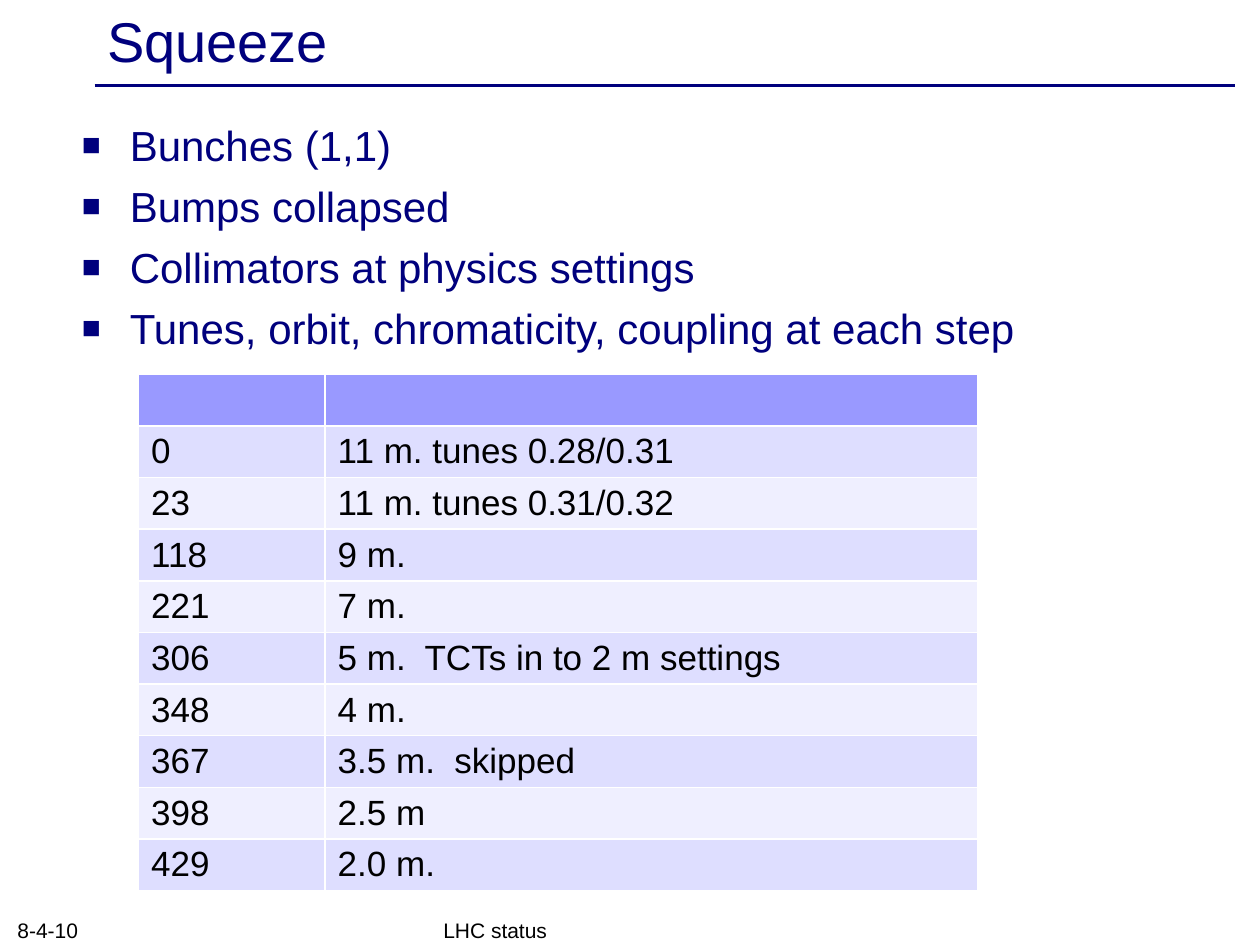
from lxml.etree import SubElement
from pptx import Presentation
from pptx.dml.color import RGBColor
from pptx.enum.shapes import MSO_CONNECTOR
from pptx.enum.text import MSO_ANCHOR, MSO_AUTO_SIZE, PP_ALIGN
from pptx.oxml.ns import qn
from pptx.util import Inches, Pt

COLORS = {"navy": "00007D", "black": "000000", "header": "9999FF",
          "odd": "DEDEFF", "even": "EFEFFF"}
FONT = "Arial"

BULLETS = ["Bunches (1,1)", "Bumps collapsed", "Collimators at physics settings",
           "Tunes, orbit, chromaticity, coupling at each step"]
SQUEEZE_STEPS = [
    ("0", "11 m. tunes 0.28/0.31"),
    ("23", "11 m. tunes 0.31/0.32"),
    ("118", "9 m."),
    ("221", "7 m."),
    ("306", "5 m.  TCTs in to 2 m settings"),
    ("348", "4 m."),
    ("367", "3.5 m.  skipped"),
    ("398", "2.5 m"),
    ("429", "2.0 m."),
]


def rgb(name):
    return RGBColor.from_string(COLORS[name])


def place(sp, box):
    sp.left, sp.top, sp.width, sp.height = (Inches(v) for v in box)


def add_text(p, text, size, color):
    p.alignment = PP_ALIGN.LEFT
    r = p.add_run()
    r.text = text
    r.font.name = FONT
    r.font.size = Pt(size)
    r.font.color.rgb = rgb(color)


def set_bullet(p):
    """Give the paragraph a hanging square bullet at 75% of the text size."""
    pPr = p._p.get_or_add_pPr()
    indent = Inches(0.38)
    pPr.set("marL", str(indent))
    pPr.set("indent", str(-indent))
    clr = SubElement(pPr, qn("a:buClr"))
    SubElement(clr, qn("a:srgbClr"), val=COLORS["navy"])
    SubElement(pPr, qn("a:buSzPct"), val="75000")
    SubElement(pPr, qn("a:buFont"), typeface=FONT)
    SubElement(pPr, qn("a:buChar"), char="■")


def fill_title(s, box, text):
    sp = s.shapes.title
    place(sp, box)
    tf = sp.text_frame
    tf.auto_size = MSO_AUTO_SIZE.NONE
    tf.vertical_anchor = MSO_ANCHOR.MIDDLE
    add_text(tf.paragraphs[0], text, 32, "navy")


def add_title_rule(s, left, right, y):
    line = s.shapes.add_connector(MSO_CONNECTOR.STRAIGHT, Inches(left), Inches(y),
                                  Inches(right), Inches(y))
    line.line.color.rgb = rgb("navy")
    line.line.width = Pt(2)
    SubElement(line._element.spPr, qn("a:effectLst"))


def fill_bullets(s, box, items):
    sp = s.placeholders[1]
    place(sp, box)
    tf = sp.text_frame
    tf.auto_size = MSO_AUTO_SIZE.NONE
    for i, item in enumerate(items):
        p = tf.add_paragraph() if i else tf.paragraphs[0]
        set_bullet(p)
        p.space_before = Pt(6 if i else 0)
        add_text(p, item, 24, "navy")


def add_steps_table(s, box, steps, first_share):
    """Draw an empty header row, then one banded row per squeeze step."""
    rows = [("", "")] + steps
    table = s.shapes.add_table(len(rows), 2, *(Inches(v) for v in box)).table
    width = box[2]
    table.columns[0].width = Inches(width * first_share)
    table.columns[1].width = Inches(width * (1 - first_share))
    for i, row in enumerate(rows):
        band = "header" if i == 0 else ("odd" if i % 2 else "even")
        for j, text in enumerate(row):
            cell = table.cell(i, j)
            cell.fill.solid()
            cell.fill.fore_color.rgb = rgb(band)
            cell.margin_top = cell.margin_bottom = Inches(0.03)
            cell.vertical_anchor = MSO_ANCHOR.MIDDLE
            if text:
                add_text(cell.text_frame.paragraphs[0], text, 20, "black")


def add_footer(s, box, text):
    tf = s.shapes.add_textbox(*(Inches(v) for v in box)).text_frame
    tf.word_wrap = True
    tf.vertical_anchor = MSO_ANCHOR.BOTTOM
    tf.margin_top = tf.margin_bottom = Inches(0.02)
    add_text(tf.paragraphs[0], text, 12, "black")


def main():
    prs = Presentation()
    prs.slide_width, prs.slide_height = Inches(10), Inches(7.5)
    s = prs.slides.add_slide(prs.slide_layouts[1])
    add_title_rule(s, 0.75, 9.8, 0.68)
    fill_title(s, (0.75, 0.03, 9, 0.57), "Squeeze")
    fill_bullets(s, (0.55, 0.9, 9, 1.95), BULLETS)
    add_footer(s, (3.42, 7.25, 3.17, 0.25), "LHC status")
    add_footer(s, (0.04, 7.25, 2.33, 0.25), "8-4-10")
    add_steps_table(s, (1.1, 2.97, 6.66, 4.1), SQUEEZE_STEPS, 2 / 9)
    prs.save("out.pptx")


if __name__ == "__main__":
    main()
